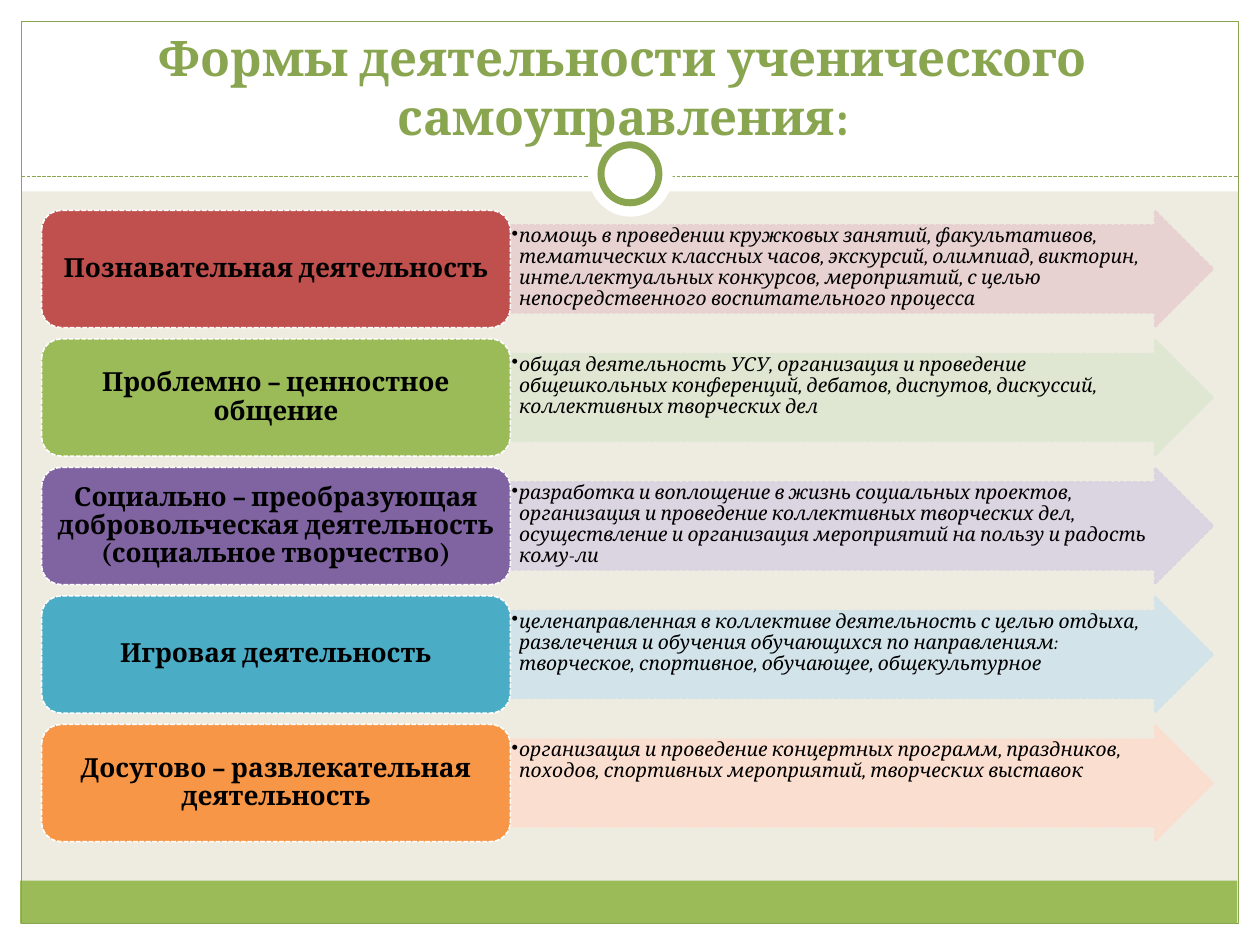
from dataclasses import dataclass

from lxml import etree
from pptx import Presentation
from pptx.dml.color import RGBColor
from pptx.enum.dml import MSO_LINE
from pptx.enum.shapes import MSO_CONNECTOR, MSO_SHAPE
from pptx.enum.text import MSO_ANCHOR, PP_ALIGN
from pptx.oxml.ns import qn
from pptx.util import Inches, Pt

RECT, OVAL = MSO_SHAPE.RECTANGLE, MSO_SHAPE.OVAL
ARROW, ROUNDED = MSO_SHAPE.RIGHT_ARROW, MSO_SHAPE.ROUNDED_RECTANGLE
DASH = MSO_LINE.SQUARE_DOT
TOP, MIDDLE, BOTTOM = MSO_ANCHOR.TOP, MSO_ANCHOR.MIDDLE, MSO_ANCHOR.BOTTOM
LEFT, CENTER = PP_ALIGN.LEFT, PP_ALIGN.CENTER

COLORS = {
    "paper": "EEECE1", "white": "FFFFFF", "black": "000000",
    "accent": "89A54F", "footer": "9BBB59",
    "red": "C0504D", "red_pale": "E8D0D0",
    "green": "9BBB59", "green_pale": "DEE7D1",
    "purple": "8064A2", "purple_pale": "D8D3E0",
    "blue": "4BACC6", "blue_pale": "D0E3EA",
    "orange": "F79646", "orange_pale": "FCDDCF",
}
TITLE_FONT = {"name": "Cambria", "size": Pt(28), "bold": True}
LABEL_FONT = {"name": "Cambria", "size": Pt(15), "bold": True}
DETAIL_FONT = {"name": "Cambria", "size": Pt(11), "italic": True}

ROW_TOP, ROW_PITCH, ROW_HEIGHT = 1.67, 1.02, 0.93
LABEL_LEFT, LABEL_WIDTH, ARROW_WIDTH = 0.33, 3.72, 5.58
BULLET_INDENT = Inches(0.06)


@dataclass
class Activity:
    label: str
    detail: str
    color: str


ACTIVITIES = [
    Activity("Познавательная деятельность",
             "помощь в проведении кружковых занятий, факультативов, тематических "
             "классных часов, экскурсий, олимпиад, викторин, интеллектуальных "
             "конкурсов, мероприятий, с целью непосредственного воспитательного "
             "процесса", "red"),
    Activity("Проблемно – ценностное общение",
             "общая деятельность УСУ, организация и проведение общешкольных "
             "конференций, дебатов, диспутов, дискуссий, коллективных творческих "
             "дел", "green"),
    Activity("Социально – преобразующая добровольческая деятельность "
             "(социальное творчество)",
             "разработка и воплощение в жизнь социальных проектов, организация и "
             "проведение коллективных творческих дел, осуществление и организация "
             "мероприятий на пользу и радость кому-ли", "purple"),
    Activity("Игровая деятельность",
             "целенаправленная в коллективе деятельность с целью отдыха, "
             "развлечения и обучения обучающихся по направлениям: творческое, "
             "спортивное, обучающее, общекультурное", "blue"),
    Activity("Досугово – развлекательная деятельность",
             "организация и проведение концертных программ, праздников, походов, "
             "спортивных мероприятий, творческих выставок", "orange"),
]


def rgb(color: str) -> RGBColor:
    return RGBColor.from_string(COLORS[color])


def style_line(line, color: str, width: float, dash=None) -> None:
    line.color.rgb = rgb(color)
    line.width = Pt(width)
    if dash is not None:
        line.dash_style = dash


def add_block(slide, kind, box: tuple, fill=None, line=None, width=0.75, dash=None):
    block = slide.shapes.add_shape(kind, *map(Inches, box))
    block.shadow.inherit = False
    if fill:
        block.fill.solid()
        block.fill.fore_color.rgb = rgb(fill)
    else:
        block.fill.background()
    if line:
        style_line(block.line, line, width, dash)
    else:
        block.line.fill.background()
    return block


def write_text(block, text: str, font: dict, color: str, anchor, align,
               insets: tuple, spacing=None) -> None:
    frame = block.text_frame
    frame.word_wrap = True
    frame.vertical_anchor = anchor
    for side, inset in zip(("left", "top", "right", "bottom"), insets):
        setattr(frame, f"margin_{side}", Inches(inset))
    paragraph = frame.paragraphs[0]
    paragraph.alignment = align
    if spacing:
        paragraph.line_spacing = spacing
    run = paragraph.add_run()
    run.text = text
    for attribute, value in font.items():
        setattr(run.font, attribute, value)
    run.font.color.rgb = rgb(color)


def add_bullet(paragraph) -> None:
    properties = paragraph._p.get_or_add_pPr()
    properties.set("marL", str(BULLET_INDENT))
    properties.set("indent", str(-BULLET_INDENT))
    etree.SubElement(properties, qn("a:buChar")).set("char", "•")


def set_opacity(shape, percent: int) -> None:
    for color in shape._element.spPr.iter(qn("a:srgbClr")):
        etree.SubElement(color, qn("a:alpha")).set("val", str(percent * 1000))


def draw_frame(slide) -> None:
    for margin in ((0, 7.33, 10, 0.17), (0, 0, 10, 1.52),
                   (0, 0, 0.17, 7.5), (9.83, 0, 0.17, 7.5)):
        add_block(slide, RECT, margin, "white")
    add_block(slide, RECT, (0.16, 6.99, 9.66, 0.34), "footer")
    add_block(slide, RECT, (0.17, 0.17, 9.66, 7.16), line="accent")
    divider = slide.shapes.add_connector(
        MSO_CONNECTOR.STRAIGHT, *map(Inches, (0.17, 1.4, 9.83, 1.4)))
    style_line(divider.line, "accent", 0.75, DASH)
    etree.SubElement(divider._element.spPr, qn("a:effectLst"))
    add_block(slide, OVAL, (4.67, 1.05, 0.67, 0.67), "white")
    add_block(slide, OVAL, (4.77, 1.15, 0.46, 0.46), "white", "accent", 4)


def draw_title(slide, text: str) -> None:
    title = slide.shapes.title
    title.left, title.top, title.width, title.height = map(
        Inches, (0.28, 0.84, 9.33, 0.83))
    write_text(title, text, TITLE_FONT, "accent", BOTTOM, CENTER,
               (0.1, 0.05, 0.1, 0.52))
    slide.shapes._spTree.append(title._element)


def draw_activity(slide, activity: Activity, top: float) -> None:
    pale = f"{activity.color}_pale"
    arrow = add_block(
        slide, ARROW, (LABEL_LEFT + LABEL_WIDTH, top, ARROW_WIDTH, ROW_HEIGHT),
        pale, pale, 0.9, DASH)
    arrow.adjustments[0] = 0.75
    set_opacity(arrow, 90)
    add_bullet(arrow.text_frame.paragraphs[0])
    write_text(arrow, activity.detail, DETAIL_FONT, "black", TOP, LEFT,
               (0.01, 0.01, 0.01, 0.01), 0.9)
    label = add_block(
        slide, ROUNDED, (LABEL_LEFT, top, LABEL_WIDTH, ROW_HEIGHT),
        activity.color, "white", 0.9, DASH)
    write_text(label, activity.label, LABEL_FONT, "black", MIDDLE, CENTER,
               (0.06, 0.03, 0.06, 0.03), 0.9)


def main() -> None:
    deck = Presentation()
    deck.slide_width, deck.slide_height = Inches(10), Inches(7.5)
    slide = deck.slides.add_slide(deck.slide_layouts[5])
    slide.background.fill.solid()
    slide.background.fill.fore_color.rgb = rgb("paper")
    draw_frame(slide)
    draw_title(slide, "Формы деятельности ученического самоуправления:")
    for row, activity in enumerate(ACTIVITIES):
        draw_activity(slide, activity, ROW_TOP + row * ROW_PITCH)
    deck.save("out.pptx")


if __name__ == "__main__":
    main()
